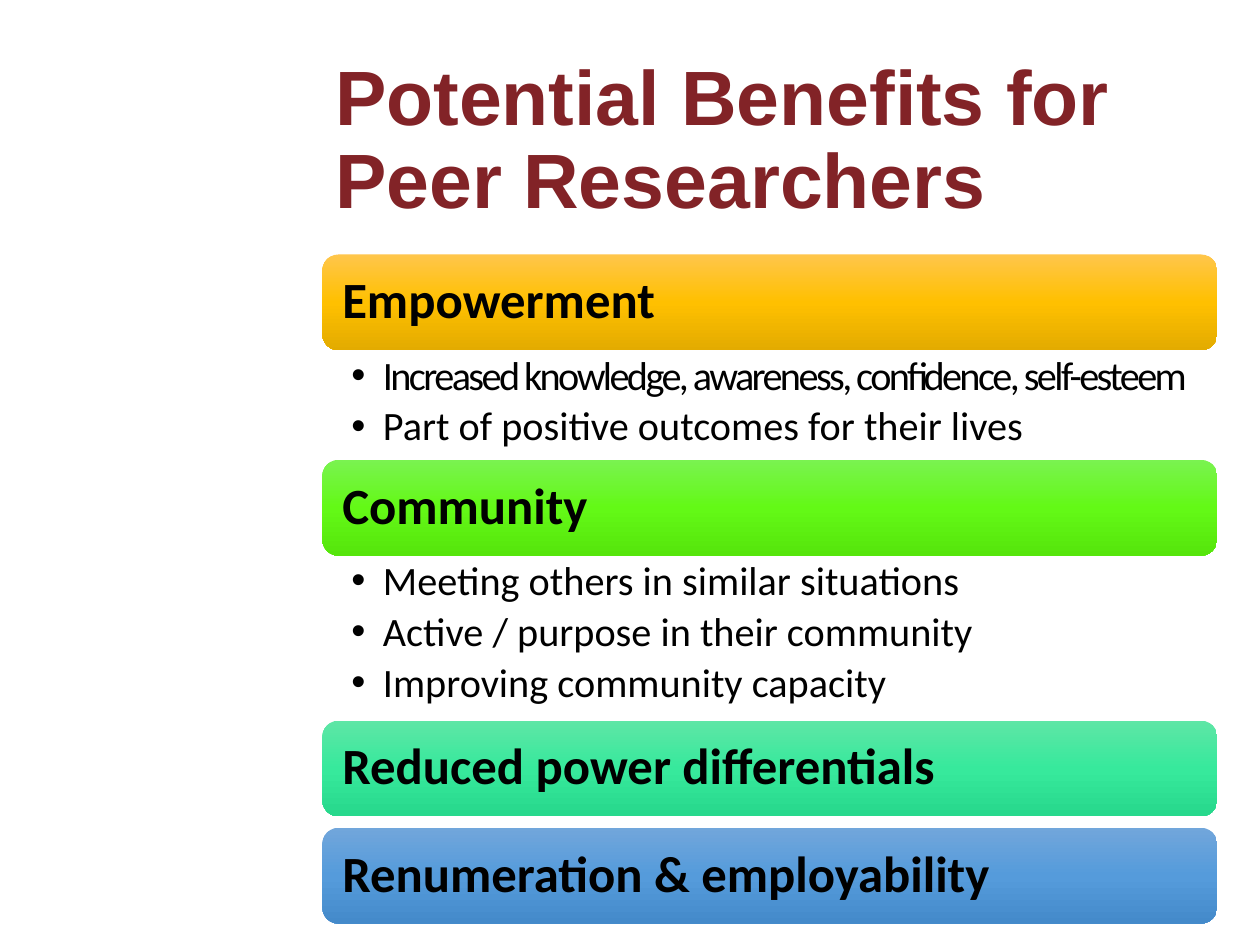
from copy import deepcopy

from pptx import Presentation
from pptx import util as u
from pptx.dml.color import RGBColor
from pptx.enum import shapes, text
from pptx.oxml import ns
from lxml import etree

BAR_HEIGHT = 0.76
BAR_GAP = 0.09
BENEFITS = [
    ("Empowerment", ["FFC64B", "FFC000", "E3AB00"], 0.87,
     [("Increased knowledge, awareness, confidence, self-esteem", -1.5),
      ("Part of positive outcomes for their lives", 0)]),
    ("Community", ["7AF350", "63F916", "56E50C"], 1.31,
     [("Meeting others in similar situations", 0),
      ("Active / purpose in their community", 0),
      ("Improving community capacity", 0)]),
    ("Reduced power differentials", ["5EE6A6", "37E99C", "27D88C"], BAR_GAP, []),
    ("Renumeration & employability", ["71A6DB", "559BDB", "448ACA"], BAR_GAP, []),
]


def color(value):
    return RGBColor.from_string(value)


def add_run(paragraph, words, size, font_name, hex_color, bold=False, spacing=0):
    paragraph.line_spacing = 0.9
    run = paragraph.add_run()
    run.text = words
    run.font.size = u.Pt(size)
    run.font.name = font_name
    run.font.bold = bold
    run.font.color.rgb = color(hex_color)
    if spacing:
        run.font._element.set("spc", str(int(spacing * 100)))


def set_insets(frame, horizontal, vertical):
    frame.word_wrap = True
    frame.margin_left = frame.margin_right = u.Inches(horizontal)
    frame.margin_top = frame.margin_bottom = u.Inches(vertical)


def fill_gradient(shape, hex_colors):
    shape.fill.gradient()
    shape.fill.gradient_angle = 270
    stop_list = shape._element.spPr.find(ns.qn("a:gradFill")).find(ns.qn("a:gsLst"))
    stop_list.append(deepcopy(stop_list[-1]))
    for index, stop in enumerate(shape.fill.gradient_stops):
        stop.position = index / 2
        stop.color.rgb = color(hex_colors[index])


def add_title(slide, left, top, width, height):
    title = slide.shapes.title
    title.left, title.top = u.Inches(left), u.Inches(top)
    title.width, title.height = u.Inches(width), u.Inches(height)
    frame = title.text_frame
    frame.word_wrap = True
    frame.auto_size = text.MSO_AUTO_SIZE.NONE
    frame.vertical_anchor = text.MSO_ANCHOR.MIDDLE
    paragraph = frame.paragraphs[0]
    paragraph.alignment = text.PP_ALIGN.LEFT
    add_run(paragraph, "Potential Benefits for Peer Researchers", 44, "Arial", "822327", True)


def add_bar(slide, heading, hex_colors, left, top, width, height):
    bar = slide.shapes.add_shape(
        shapes.MSO_SHAPE.ROUNDED_RECTANGLE,
        u.Inches(left), u.Inches(top), u.Inches(width), u.Inches(height))
    bar.shadow.inherit = False
    bar.line.fill.background()
    fill_gradient(bar, hex_colors)
    frame = bar.text_frame
    set_insets(frame, 0.12, 0.12)
    frame.vertical_anchor = text.MSO_ANCHOR.MIDDLE
    paragraph = frame.paragraphs[0]
    paragraph.alignment = text.PP_ALIGN.LEFT
    add_run(paragraph, heading, 29, "Calibri", "000000", True)


def add_bullets(slide, points, left, top, width, height):
    box = slide.shapes.add_textbox(
        u.Inches(left), u.Inches(top), u.Inches(width), u.Inches(height))
    frame = box.text_frame
    set_insets(frame, 0.23, 0.04)
    for index, (words, spacing) in enumerate(points):
        paragraph = frame.add_paragraph() if index else frame.paragraphs[0]
        paragraph.space_after = u.Pt(4.2)
        properties = paragraph._p.get_or_add_pPr()
        properties.set("marL", str(u.Inches(0.25)))
        properties.set("indent", str(u.Inches(-0.25)))
        etree.SubElement(properties, ns.qn("a:buFont")).set("typeface", "Arial")
        etree.SubElement(properties, ns.qn("a:buChar")).set("char", "•")
        add_run(paragraph, words, 23, "Calibri", "000000", spacing=spacing)


def add_benefits(slide, left, top, width):
    for heading, hex_colors, space_below, points in BENEFITS:
        add_bar(slide, heading, hex_colors, left, top, width, BAR_HEIGHT)
        top += BAR_HEIGHT
        if points:
            add_bullets(slide, points, left, top, width, space_below)
        top += space_below


def main():
    presentation = Presentation()
    presentation.slide_width = u.Inches(10)
    presentation.slide_height = u.Inches(7.5)
    slide = presentation.slides.add_slide(presentation.slide_layouts[5])
    add_title(slide, 2.56, 0.4, 7.44, 1.45)
    add_benefits(slide, 2.56, 2.02, 7.1)
    presentation.save("out.pptx")


if __name__ == "__main__":
    main()
